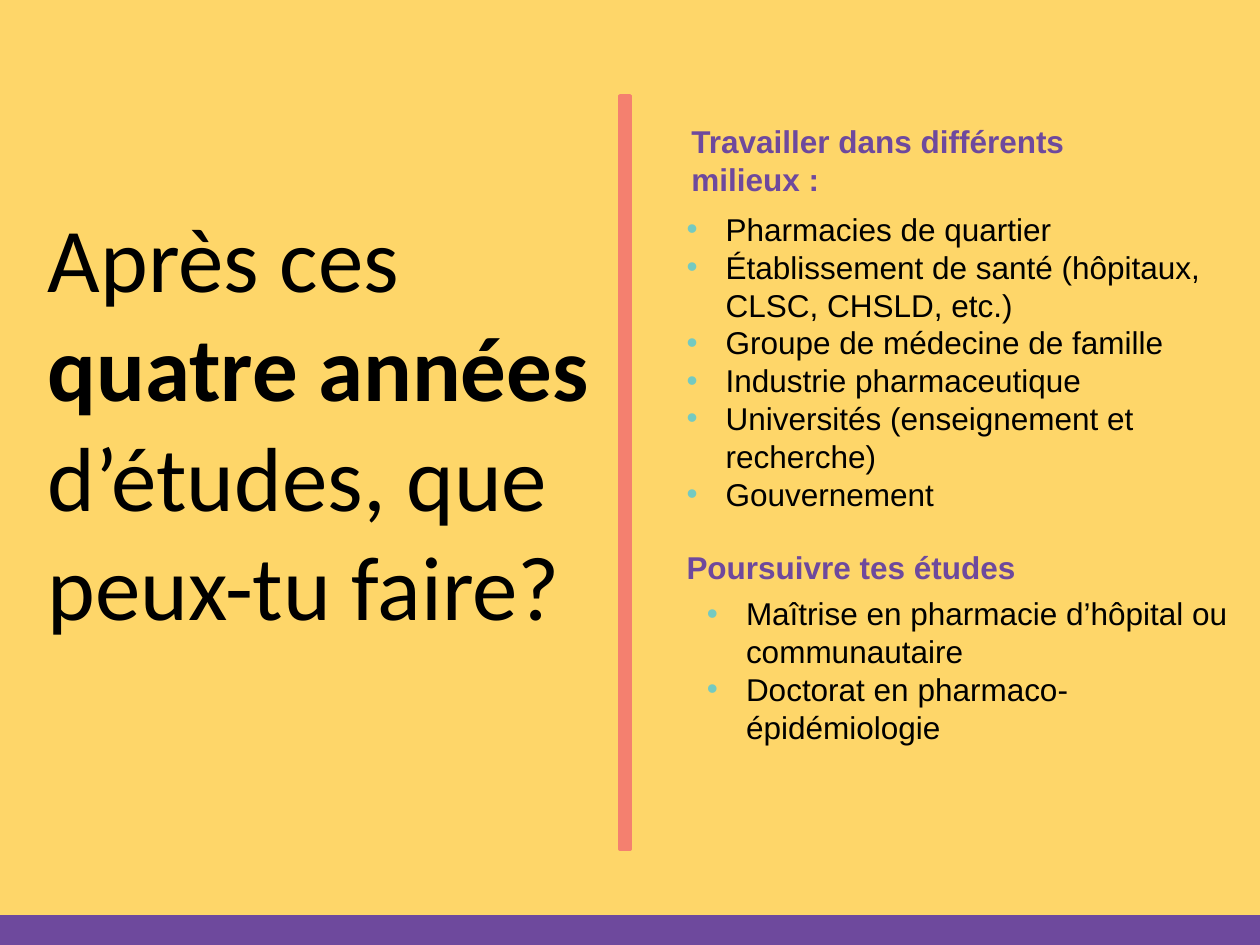
from dataclasses import dataclass

import pptx
import pptx.dml.color
import pptx.enum.shapes
import pptx.enum.text
import pptx.oxml
import pptx.oxml.ns
import pptx.util
from pptx.util import Cm

COLORS = {
    "yellow": "FED669",
    "coral": "F4806F",
    "purple": "6E499D",
    "teal": "74CAC1",
    "black": "000000",
}
WIDTH, HEIGHT = 25.4, 19.05
INDENT = 0.79


@dataclass
class Box:
    """Position and size in centimetres."""
    left: float
    top: float
    width: float
    height: float

    def emu(self) -> tuple:
        return Cm(self.left), Cm(self.top), Cm(self.width), Cm(self.height)


@dataclass
class Bar:
    box: Box
    color: str


@dataclass
class Section:
    heading: str
    heading_box: Box
    items: list[str]
    list_box: Box


BACKDROP = Bar(Box(0, 0, WIDTH, HEIGHT), "yellow")
ACCENTS = [
    Bar(Box(12.5, 1.93, 0.2, 15.19), "coral"),
    Bar(Box(0, 18.49, WIDTH, 0.56), "purple"),
]
TITLE_BOX = Box(0.71, 3.94, 11.61, 9.14)
TITLE_RUNS = [
    ("Après ces ", False),
    ("quatre années ", True),
    ("d’études, que peux-tu faire?", False),
]
SECTIONS = [
    Section(
        "Travailler dans différents milieux :",
        Box(13.69, 2.34, 10, 1.8),
        [
            "Pharmacies de quartier",
            "Établissement de santé (hôpitaux, CLSC, CHSLD, etc.)",
            "Groupe de médecine de famille",
            "Industrie pharmaceutique",
            "Universités (enseignement et recherche)",
            "Gouvernement",
        ],
        Box(13.59, 4.11, 11, 6.4),
    ),
    Section(
        "Poursuivre tes études",
        Box(13.59, 10.92, 10, 1.02),
        [
            "Maîtrise en pharmacie d’hôpital ou communautaire",
            "Doctorat en pharmaco-épidémiologie",
        ],
        Box(14, 11.86, 11, 3.33),
    ),
]


def rgb(name: str) -> pptx.dml.color.RGBColor:
    return pptx.dml.color.RGBColor.from_string(COLORS[name])


def format_run(r, font: str, size: float, color: str, bold: bool = False) -> None:
    r.font.name = font
    r.font.size = pptx.util.Pt(size)
    r.font.bold = bold
    r.font.color.rgb = rgb(color)


def add_bullet(p) -> None:
    pPr = p._p.get_or_add_pPr()
    pPr.set("marL", str(Cm(INDENT)))
    pPr.set("indent", str(-Cm(INDENT)))
    ns = pptx.oxml.ns.nsdecls("a")
    for xml in (
        f'<a:buClr {ns}><a:srgbClr val="{COLORS["teal"]}"/></a:buClr>',
        f'<a:buFont {ns} typeface="Arial"/>',
        f'<a:buChar {ns} char="•"/>',
    ):
        pPr.append(pptx.oxml.parse_xml(xml))


def draw_bar(s, bar: Bar):
    sp = s.shapes.add_shape(
        pptx.enum.shapes.MSO_SHAPE.RECTANGLE, *bar.box.emu())
    sp.shadow.inherit = False
    sp.fill.solid()
    sp.fill.fore_color.rgb = rgb(bar.color)
    sp.line.color.rgb = rgb(bar.color)
    sp.line.width = pptx.util.Pt(2)
    return sp


def draw_title(s) -> None:
    sp = s.shapes.title
    sp.left, sp.top, sp.width, sp.height = TITLE_BOX.emu()
    tf = sp.text_frame
    tf.word_wrap = True
    tf.auto_size = pptx.enum.text.MSO_AUTO_SIZE.NONE
    tf.vertical_anchor = pptx.enum.text.MSO_ANCHOR.TOP
    p = tf.paragraphs[0]
    p.alignment = pptx.enum.text.PP_ALIGN.LEFT
    for text, bold in TITLE_RUNS:
        r = p.add_run()
        r.text = text
        format_run(r, "Calibri", 52, "black", bold)


def draw_text(s, box: Box, lines: list[str], color: str,
              bold: bool = False, bullets: bool = False) -> None:
    tf = s.shapes.add_textbox(*box.emu()).text_frame
    tf.word_wrap = True
    tf.text = "\n".join(lines)
    for p in tf.paragraphs:
        format_run(p.runs[0], "Arial", 18, color, bold)
        if bullets:
            add_bullet(p)


def main() -> None:
    prs = pptx.Presentation()
    prs.slide_width, prs.slide_height = Cm(WIDTH), Cm(HEIGHT)
    s = prs.slides.add_slide(prs.slide_layouts[5])

    # Question on the left, with the backdrop moved behind it
    draw_title(s)
    backdrop = draw_bar(s, BACKDROP)
    s.shapes.title.element.addprevious(backdrop.element)

    # Divider and footer band
    for bar in ACCENTS:
        draw_bar(s, bar)

    # Answers on the right
    for section in SECTIONS:
        draw_text(s, section.heading_box, [section.heading], "purple", bold=True)
        draw_text(s, section.list_box, section.items, "black", bullets=True)

    prs.save("out.pptx")


if __name__ == "__main__":
    main()
